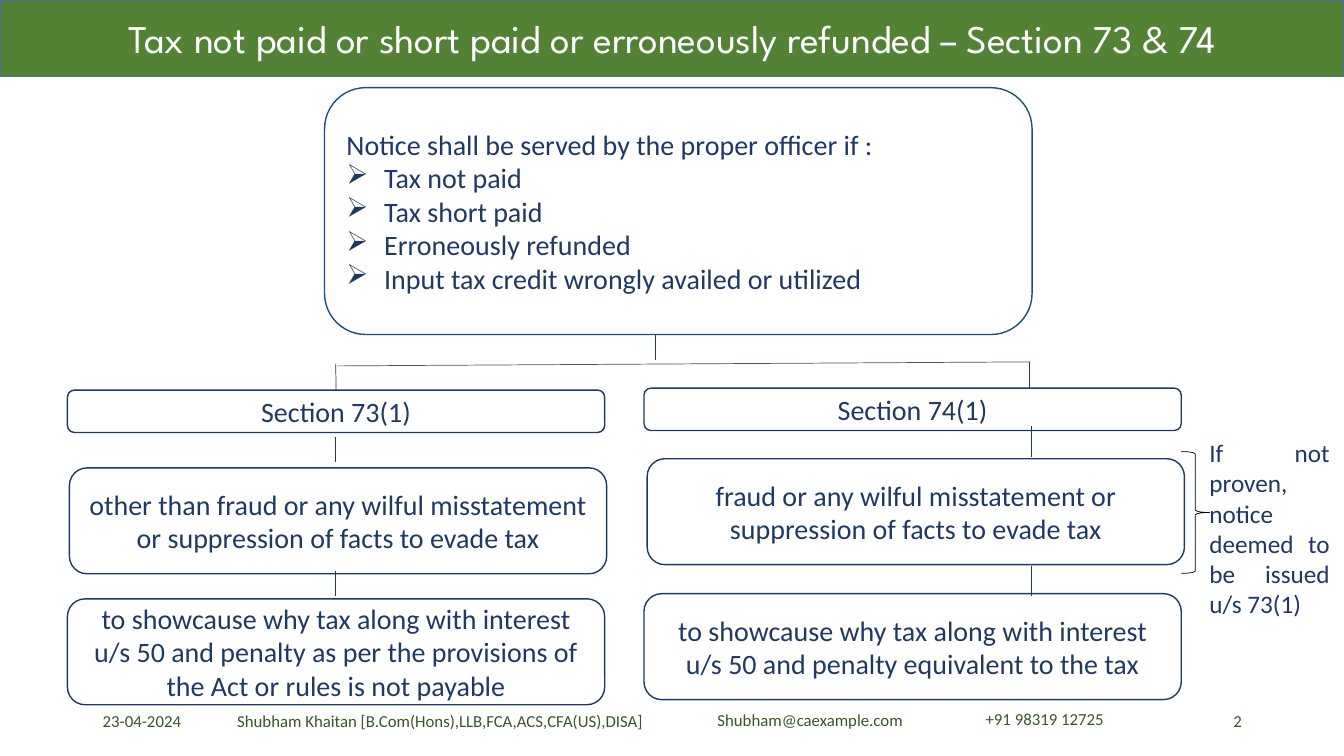
import dataclasses
import typing

import lxml.etree
import pptx
import pptx.dml.color
import pptx.enum.shapes
import pptx.enum.text
import pptx.oxml.ns
import pptx.util

ALIGN = pptx.enum.text.PP_ALIGN
ANCHOR = pptx.enum.text.MSO_ANCHOR
SHAPE = pptx.enum.shapes.MSO_SHAPE


@dataclasses.dataclass(frozen=True)
class Theme:
    title_font: str = "League Spartan"
    body_font: str = "Calibri"
    band: str = "548235"
    band_edge: str = "43739E"
    notice_edge: str = "1F4E79"
    navy: str = "203864"
    crossbar: str = "44546A"
    footer: str = "385723"
    white: str = "FFFFFF"
    black: str = "000000"
    title_size: int = 28
    box_size: int = 20
    note_size: int = 18
    footer_size: int = 12
    box_line: float = 1
    thin_line: float = 0.5


THEME = Theme()
BOX_WIDTH, BOX_HEIGHT, HEADING_HEIGHT = 13.54, 2.67, 1.07
LEFT_STEM, RIGHT_STEM = 8.46, 25.98
BULLET_INDENT = 0.95


class Area(typing.NamedTuple):
    left: float
    top: float
    width: float
    height: float


class TextStyle(typing.NamedTuple):
    size: float
    color: str
    align: ALIGN = ALIGN.CENTER
    font: str = THEME.body_font


@dataclasses.dataclass(frozen=True)
class Box:
    area: Area
    text: str
    style: TextStyle = TextStyle(THEME.box_size, THEME.navy)
    fill: str = THEME.white
    edge: str = THEME.navy
    outline: SHAPE = SHAPE.ROUNDED_RECTANGLE


@dataclasses.dataclass(frozen=True)
class Label:
    area: Area
    text: str
    style: TextStyle
    anchor: ANCHOR = ANCHOR.TOP


class Link(typing.NamedTuple):
    start: tuple[float, float]
    end: tuple[float, float]
    color: str = THEME.navy


def rgb(color: str) -> pptx.dml.color.RGBColor:
    return pptx.dml.color.RGBColor.from_string(color)


def lengths(*values: float) -> list[pptx.util.Length]:
    return [pptx.util.Cm(value) for value in values]


def write(frame, text: str, style: TextStyle, anchor: ANCHOR) -> None:
    frame.text = text
    frame.word_wrap = True
    frame.vertical_anchor = anchor
    for paragraph in frame.paragraphs:
        paragraph.alignment = style.align
        for run in paragraph.runs:
            run.font.name = style.font
            run.font.size = pptx.util.Pt(style.size)
            run.font.color.rgb = rgb(style.color)


def set_line(line, color: str, width: float) -> None:
    line.color.rgb = rgb(color)
    line.width = pptx.util.Pt(width)


def draw_box(slide, box: Box):
    shape = slide.shapes.add_shape(box.outline, *lengths(*box.area))
    shape.shadow.inherit = False
    shape.fill.solid()
    shape.fill.fore_color.rgb = rgb(box.fill)
    set_line(shape.line, box.edge, THEME.box_line)
    write(shape.text_frame, box.text, box.style, ANCHOR.MIDDLE)
    return shape


def draw_label(slide, label: Label) -> None:
    text_box = slide.shapes.add_textbox(*lengths(*label.area))
    write(text_box.text_frame, label.text, label.style, label.anchor)


def draw_link(slide, link: Link):
    connector = slide.shapes.add_connector(
        pptx.enum.shapes.MSO_CONNECTOR.STRAIGHT, *lengths(*link.start, *link.end)
    )
    set_line(connector.line, link.color, THEME.thin_line)
    properties = connector._element.spPr
    lxml.etree.SubElement(properties, pptx.oxml.ns.qn("a:effectLst"))
    return connector


def draw_brace(slide, area: Area) -> None:
    brace = slide.shapes.add_shape(SHAPE.RIGHT_BRACE, *lengths(*area))
    brace.shadow.inherit = False
    brace.fill.background()
    set_line(brace.line, THEME.black, THEME.thin_line)


def add_bullet(paragraph) -> None:
    properties = paragraph._p.get_or_add_pPr()
    indent = pptx.util.Cm(BULLET_INDENT)
    properties.set("marL", str(indent))
    properties.set("indent", str(-indent))
    bullet = lxml.etree.SubElement(properties, pptx.oxml.ns.qn("a:buChar"))
    bullet.set("char", "➢")


TITLE = Box(
    Area(0, 0, 33.87, 1.93),
    "Tax not paid or short paid or erroneously refunded – Section 73 & 74",
    TextStyle(THEME.title_size, THEME.white, font=THEME.title_font),
    THEME.band,
    THEME.band_edge,
    SHAPE.RECTANGLE,
)
NOTICE = Box(
    Area(8.18, 2.21, 17.83, 6.22),
    "Notice shall be served by the proper officer if :\nTax not paid\nTax short paid\n"
    "Erroneously refunded\nInput tax credit wrongly availed or utilized",
    TextStyle(THEME.box_size, THEME.navy, ALIGN.LEFT),
    edge=THEME.notice_edge,
)
SECTION_73 = Box(Area(1.7, 9.83, BOX_WIDTH, HEADING_HEIGHT), "Section 73(1)")
BRANCH_BOXES = [
    Box(Area(16.23, 9.78, BOX_WIDTH, HEADING_HEIGHT), "Section 74(1)"),
    Box(Area(1.75, 11.79, BOX_WIDTH, BOX_HEIGHT),
        "other than fraud or any wilful misstatement or suppression of facts to evade tax"),
    Box(Area(16.31, 11.56, BOX_WIDTH, BOX_HEIGHT),
        "fraud or any wilful misstatement or suppression of facts to evade tax"),
    Box(Area(1.7, 15.09, BOX_WIDTH, BOX_HEIGHT),
        "to showcause why tax along with interest u/s 50 and penalty as per the provisions "
        "of the Act or rules is not payable"),
    Box(Area(16.23, 14.96, BOX_WIDTH, BOX_HEIGHT),
        "to showcause why tax along with interest u/s 50 and penalty equivalent to the tax"),
]
SECTION_73_LINK = Link((LEFT_STEM, 9.17), (LEFT_STEM, 9.83))
LINKS = [
    Link((8.51, 9.22), (RIGHT_STEM, 9.12), THEME.crossbar),
    Link((16.51, 8.41), (16.51, 9.07)),
    Link((25.93, 9.12), (25.93, 9.78)),
    Link((LEFT_STEM, 11), (LEFT_STEM, 11.63)),
    Link((RIGHT_STEM, 10.74), (RIGHT_STEM, 11.51)),
    Link((LEFT_STEM, 14.38), (LEFT_STEM, 15.01)),
    Link((RIGHT_STEM, 14.25), (RIGHT_STEM, 15.01)),
]
FOOTER_LEFT, FOOTER_CENTER, FOOTER_RIGHT = (
    TextStyle(THEME.footer_size, THEME.footer, align)
    for align in (ALIGN.LEFT, ALIGN.CENTER, ALIGN.RIGHT)
)
LABELS = [
    Label(Area(2.34, 17.65, 7.62, 1.02), "23-04-2024", FOOTER_LEFT, ANCHOR.MIDDLE),
    Label(Area(5.38, 17.65, 11.43, 1.02),
          "Shubham Khaitan [B.Com(Hons),LLB,FCA,ACS,CFA(US),DISA]",
          FOOTER_CENTER, ANCHOR.MIDDLE),
    Label(Area(17.83, 17.75, 7.42, 0.76), "Shubham@caexample.com", FOOTER_LEFT),
    Label(Area(24.59, 17.73, 7.42, 0.76), "+91 98319 12725", FOOTER_LEFT),
    Label(Area(23.93, 17.65, 7.62, 1.02), "2", FOOTER_RIGHT, ANCHOR.MIDDLE),
    Label(Area(30.23, 10.9, 3.53, 4.88),
          "If not proven, notice deemed to be issued u/s 73(1)",
          TextStyle(THEME.note_size, THEME.navy, ALIGN.JUSTIFY)),
]


def main() -> None:
    presentation = pptx.Presentation()
    presentation.slide_width, presentation.slide_height = lengths(33.87, 19.05)
    slide = presentation.slides.add_slide(presentation.slide_layouts[6])
    draw_box(slide, TITLE)
    notice = draw_box(slide, NOTICE)
    for ground in notice.text_frame.paragraphs[1:]:
        add_bullet(ground)
    section_73 = draw_box(slide, SECTION_73)
    for box in BRANCH_BOXES:
        draw_box(slide, box)
    draw_link(slide, SECTION_73_LINK).end_connect(section_73, 0)
    for link in LINKS:
        draw_link(slide, link)
    for label in LABELS:
        draw_label(slide, label)
    draw_brace(slide, Area(29.77, 11.38, 0.71, 3.07))
    presentation.save("out.pptx")


if __name__ == "__main__":
    main()
